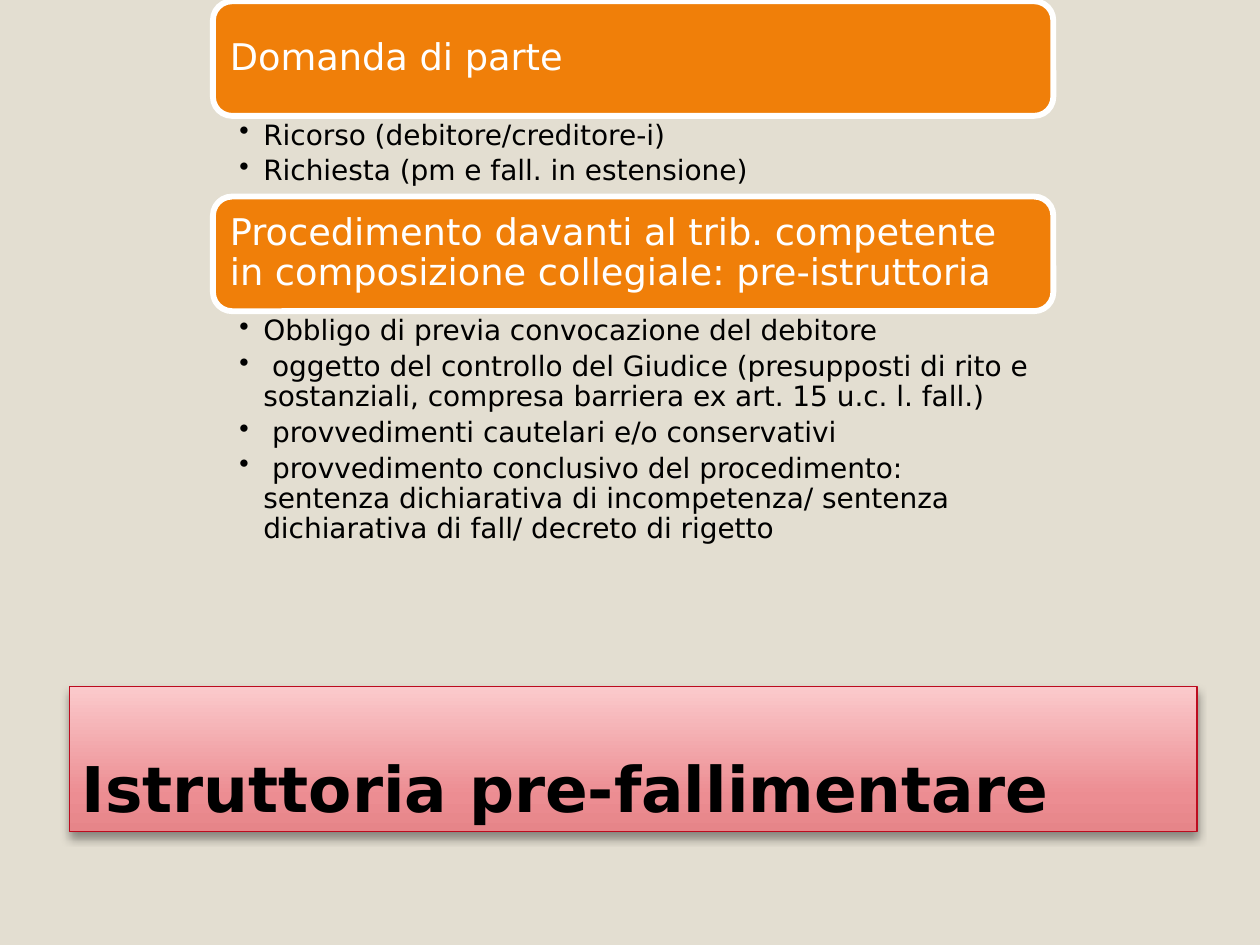
from dataclasses import dataclass

import pptx
import pptx.dml.color
import pptx.enum.shapes
import pptx.enum.text
import pptx.oxml
import pptx.oxml.ns
import pptx.util

COLS, ROWS = 100, 75
LEFT, SPAN, CARD = 16.9, 66.7, 9.1
FONT = "DejaVu Sans"
HUES = {
    "back": "E3DED1",
    "card": "F07F09",
    "white": "FFFFFF",
    "black": "000000",
    "edge": "BC0B1F",
}
STOPS = [(0, "E68589"), (25, "EC8D92"), (100, "FBCACC")]
NS = pptx.oxml.ns.nsdecls("a")
SHAPES = pptx.enum.shapes.MSO_SHAPE
ANCHOR = pptx.enum.text.MSO_ANCHOR

deck = pptx.Presentation()
deck.slide_width = pptx.util.Inches(10)
deck.slide_height = pptx.util.Inches(7.5)
slide = deck.slides.add_slide(deck.slide_layouts[6])


@dataclass
class Step:
    row: float
    head: str
    items: list[str]
    rows: float


STEPS = [
    Step(0.1, "Domanda di parte", [
        "Ricorso (debitore/creditore-i)",
        "Richiesta (pm e fall. in estensione)",
    ], 6.1),
    Step(15.6, "Procedimento davanti al trib. competente in composizione collegiale: pre-istruttoria", [
        "Obbligo di previa convocazione del debitore",
        " oggetto del controllo del Giudice (presupposti di rito e sostanziali, compresa barriera ex art. 15 u.c. l. fall.)",
        " provvedimenti cautelari e/o conservativi",
        " provvedimento conclusivo del procedimento: sentenza dichiarativa di incompetenza/ sentenza dichiarativa di fall/ decreto di rigetto",
    ], 28.5),
]


def hue(name: str) -> pptx.dml.color.RGBColor:
    return pptx.dml.color.RGBColor.from_string(HUES[name])


def place(col: float, row: float, wide: float, high: float) -> list[int]:
    unit_x, unit_y = deck.slide_width / COLS, deck.slide_height / ROWS
    return [round(col * unit_x), round(row * unit_y), round(wide * unit_x), round(high * unit_y)]


def frame(shape, anchor, pads: tuple) -> None:
    text = shape.text_frame
    text.word_wrap = True
    text.vertical_anchor = anchor
    text.margin_left, text.margin_top, text.margin_right, text.margin_bottom = map(pptx.util.Inches, pads)


def style(para, size: float, tone: str, bold: bool = False) -> None:
    para.alignment = pptx.enum.text.PP_ALIGN.LEFT
    para.font.name = FONT
    para.font.size = pptx.util.Pt(size)
    para.font.bold = bold
    para.font.color.rgb = hue(tone)


def block(kind, area: list[int], edge: str, width: float):
    shape = slide.shapes.add_shape(kind, *area)
    shape.shadow.inherit = False
    shape.line.color.rgb = hue(edge)
    shape.line.width = pptx.util.Pt(width)
    return shape


def card(step: Step) -> None:
    shape = block(SHAPES.ROUNDED_RECTANGLE, place(LEFT, step.row, SPAN, CARD), "white", 3.35)
    shape.fill.solid()
    shape.fill.fore_color.rgb = hue("card")
    frame(shape, ANCHOR.MIDDLE, (0.09,) * 4)
    para = shape.text_frame.paragraphs[0]
    para.text = step.head
    para.line_spacing = 0.9
    style(para, 21, "white")


def points(step: Step) -> None:
    box = slide.shapes.add_textbox(*place(LEFT, step.row + CARD + 0.1, SPAN, step.rows))
    frame(box, ANCHOR.TOP, (0.21, 0.03, 0.16, 0.03))
    text = box.text_frame
    text.text = "\n".join(step.items)
    for para in text.paragraphs:
        props = para._p.get_or_add_pPr()
        dent = pptx.util.Inches(0.19)
        props.set("marL", str(dent))
        props.set("indent", str(-dent))
        props.append(pptx.oxml.parse_xml(f'<a:buChar {NS} char="•"/>'))
        para.line_spacing = 0.9
        para.space_after = pptx.util.Pt(3.2)
        style(para, 16, "black")


def title(words: str) -> None:
    shape = block(SHAPES.RECTANGLE, place(5.5, 54.5, 89.5, 11.5), "edge", 0.75)
    shape.fill.gradient()
    props = shape._element.spPr
    old = props.find(pptx.oxml.ns.qn("a:gradFill"))
    stops = "".join(
        f'<a:gs pos="{pos * 1000}"><a:srgbClr val="{tone}"/></a:gs>' for pos, tone in STOPS
    )
    props.replace(old, pptx.oxml.parse_xml(
        f'<a:gradFill {NS} rotWithShape="1"><a:gsLst>{stops}</a:gsLst>'
        '<a:lin ang="16200000" scaled="0"/></a:gradFill>'
    ))
    blur, drop = pptx.util.Pt(5.2), pptx.util.Pt(3)
    props.find(pptx.oxml.ns.qn("a:effectLst")).append(pptx.oxml.parse_xml(
        f'<a:outerShdw {NS} blurRad="{blur}" dist="{drop}" dir="5400000" rotWithShape="0">'
        f'<a:srgbClr val="{HUES["black"]}"><a:alpha val="40000"/></a:srgbClr></a:outerShdw>'
    ))
    frame(shape, ANCHOR.BOTTOM, (0.1, 0.05, 0.1, 0.05))
    para = shape.text_frame.paragraphs[0]
    para.text = words
    style(para, 36, "black", True)


def main() -> None:
    slide.background.fill.solid()
    slide.background.fill.fore_color.rgb = hue("back")
    title("Istruttoria pre-fallimentare")
    for step in STEPS:
        card(step)
        points(step)
    deck.save("out.pptx")


if __name__ == "__main__":
    main()
